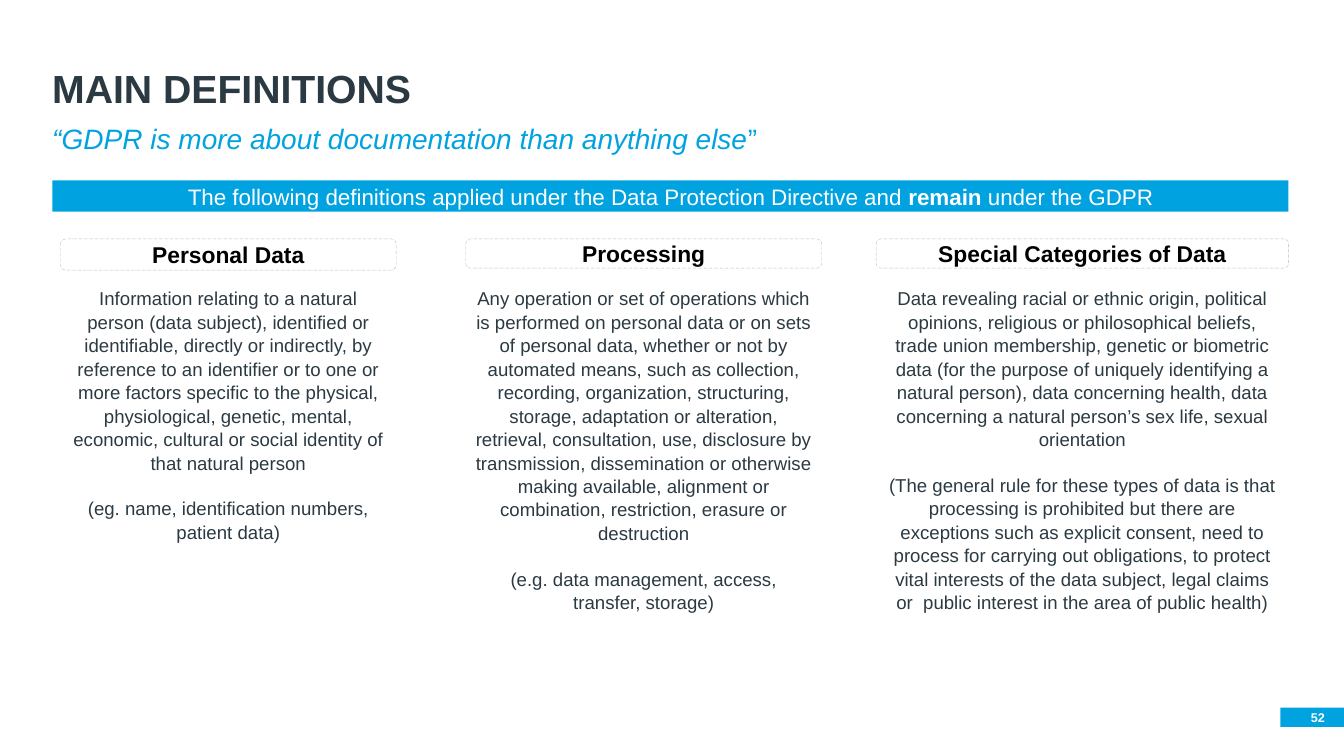
from dataclasses import dataclass

from pptx import Presentation
from pptx.dml.color import RGBColor
from pptx.enum.dml import MSO_LINE
from pptx.enum.shapes import MSO_SHAPE
from pptx.enum.text import MSO_ANCHOR, MSO_AUTO_SIZE, PP_ALIGN
from pptx.util import Emu, Pt


@dataclass(frozen=True)
class Theme:
    font: str = "Arial"
    accent: str = "00A3E0"
    ink: str = "2B3A42"
    black: str = "000000"
    white: str = "FFFFFF"
    outline: str = "AABECA"
    title: float = 28
    quote: float = 20
    heading: float = 16.3
    banner: float = 16
    body: float = 13.3
    number: float = 9


class Deck:
    EMU_PER_PX = 9144

    def __init__(self, theme, width, height):
        self.theme = theme
        self.presentation = Presentation()
        self.presentation.slide_width = self.px(width)
        self.presentation.slide_height = self.px(height)
        blank = self.presentation.slide_layouts[6]
        self.slide = self.presentation.slides.add_slide(blank)

    def px(self, length):
        return Emu(length * self.EMU_PER_PX)

    def set_text(self, paragraph, text, size, color, bold=None,
                 align=PP_ALIGN.CENTER):
        paragraph.alignment = align
        font = paragraph.font
        font.name = self.theme.font
        font.size = Pt(size)
        font.bold = bold
        font.color.rgb = RGBColor.from_string(color)
        if text:
            paragraph.add_run().text = text

    def block(self, box, fill, preset=MSO_SHAPE.RECTANGLE, outline=None):
        block = self.slide.shapes.add_shape(preset, *map(self.px, box))
        block.shadow.inherit = False
        block.fill.solid()
        block.fill.fore_color.rgb = RGBColor.from_string(fill)
        if outline:
            block.line.color.rgb = RGBColor.from_string(outline)
            block.line.width = Pt(0.25)
            block.line.dash_style = MSO_LINE.LONG_DASH_DOT
        else:
            block.line.fill.background()
        frame = block.text_frame
        frame.word_wrap = True
        frame.vertical_anchor = MSO_ANCHOR.MIDDLE
        return frame

    def text(self, box, anchor=MSO_ANCHOR.TOP):
        frame = self.slide.shapes.add_textbox(*map(self.px, box)).text_frame
        frame.word_wrap = True
        frame.vertical_anchor = anchor
        return frame

    def title(self, box, text):
        paragraph = self.text(box, MSO_ANCHOR.BOTTOM).paragraphs[0]
        paragraph.line_spacing = 0.9
        self.set_text(paragraph, text, self.theme.title, self.theme.ink,
                      bold=True, align=PP_ALIGN.LEFT)

    def quote(self, box, italic_part, closing):
        paragraph = self.text(box).paragraphs[0]
        paragraph.line_spacing = 0.9
        self.set_text(paragraph, None, self.theme.quote, self.theme.accent,
                      align=PP_ALIGN.LEFT)
        for part, italic in ((italic_part, True), (closing, False)):
            run = paragraph.add_run()
            run.text = part
            run.font.italic = italic

    def banner(self, box, before, stressed, after):
        paragraph = self.block(box, self.theme.accent).paragraphs[0]
        self.set_text(paragraph, None, self.theme.banner, self.theme.white)
        for part, bold in ((before, False), (stressed, True), (after, False)):
            run = paragraph.add_run()
            run.text = part
            run.font.bold = bold

    def heading(self, box, text):
        frame = self.block(box, self.theme.white, MSO_SHAPE.ROUNDED_RECTANGLE,
                           self.theme.outline)
        self.set_text(frame.paragraphs[0], text, self.theme.heading,
                      self.theme.black, bold=True)

    def description(self, box, meaning, remark):
        frame = self.text(box)
        frame.auto_size = MSO_AUTO_SIZE.SHAPE_TO_FIT_TEXT
        remark_paragraph = frame.add_paragraph()
        remark_paragraph.space_before = Pt(16)
        for paragraph, text in zip(frame.paragraphs, (meaning, remark)):
            paragraph.line_spacing = 1.05
            self.set_text(paragraph, text, self.theme.body, self.theme.ink)

    def page_number(self, box, right_gap, number):
        left, top, width, height = box
        self.block(box, self.theme.accent)
        frame = self.text((left, top, width - right_gap, height),
                          MSO_ANCHOR.MIDDLE)
        frame.margin_left = frame.margin_right = 0
        frame.margin_top = frame.margin_bottom = 0
        self.set_text(frame.paragraphs[0], number, self.theme.number,
                      self.theme.white, bold=True, align=PP_ALIGN.RIGHT)


DEFINITIONS = [
    (60, 333, 31, 257, "Personal Data",
     "Information relating to a natural person (data subject), identified or "
     "identifiable, directly or indirectly, by reference to an identifier or "
     "to one or more factors specific to the physical, physiological, "
     "genetic, mental, economic, cultural or social identity of that natural "
     "person",
     "(eg. name, identification numbers, patient data)"),
    (462, 353, 29, 324, "Processing",
     "Any operation or set of operations which is performed on personal data "
     "or on sets of personal data, whether or not by automated means, such as "
     "collection, recording, organization, structuring, storage, adaptation "
     "or alteration, retrieval, consultation, use, disclosure by "
     "transmission, dissemination or otherwise making available, alignment "
     "or combination, restriction, erasure or destruction",
     "(e.g. data management, access, transfer, storage)"),
    (869, 409, 29, 324, "Special Categories of Data",
     "Data revealing racial or ethnic origin, political opinions, religious "
     "or philosophical beliefs, trade union membership, genetic or biometric "
     "data (for the purpose of uniquely identifying a natural person), data "
     "concerning health, data concerning a natural person’s sex life, sexual "
     "orientation",
     "(The general rule for these types of data is that processing is "
     "prohibited but there are exceptions such as explicit consent, need to "
     "process for carrying out obligations, to protect vital interests of "
     "the data subject, legal claims or  public interest in the area of "
     "public health)"),
]
HEADING_TOP, DESCRIPTION_TOP = 237, 279


def main():
    deck = Deck(Theme(), 1333, 750)
    deck.page_number((1270, 702, 63, 19), 19, "52")
    deck.title((42, 32, 1240, 84), "MAIN DEFINITIONS")
    deck.quote((42, 119, 1240, 44),
               "“GDPR is more about documentation than anything else", "”")
    deck.banner((52, 179, 1226, 31),
                "The following definitions applied under the Data Protection "
                "Directive and ", "remain", " under the GDPR")
    for left, width, heading_height, height, term, meaning, remark in DEFINITIONS:
        deck.heading((left, HEADING_TOP, width, heading_height), term)
        deck.description((left, DESCRIPTION_TOP, width, height), meaning, remark)
    deck.presentation.save("out.pptx")


if __name__ == "__main__":
    main()
